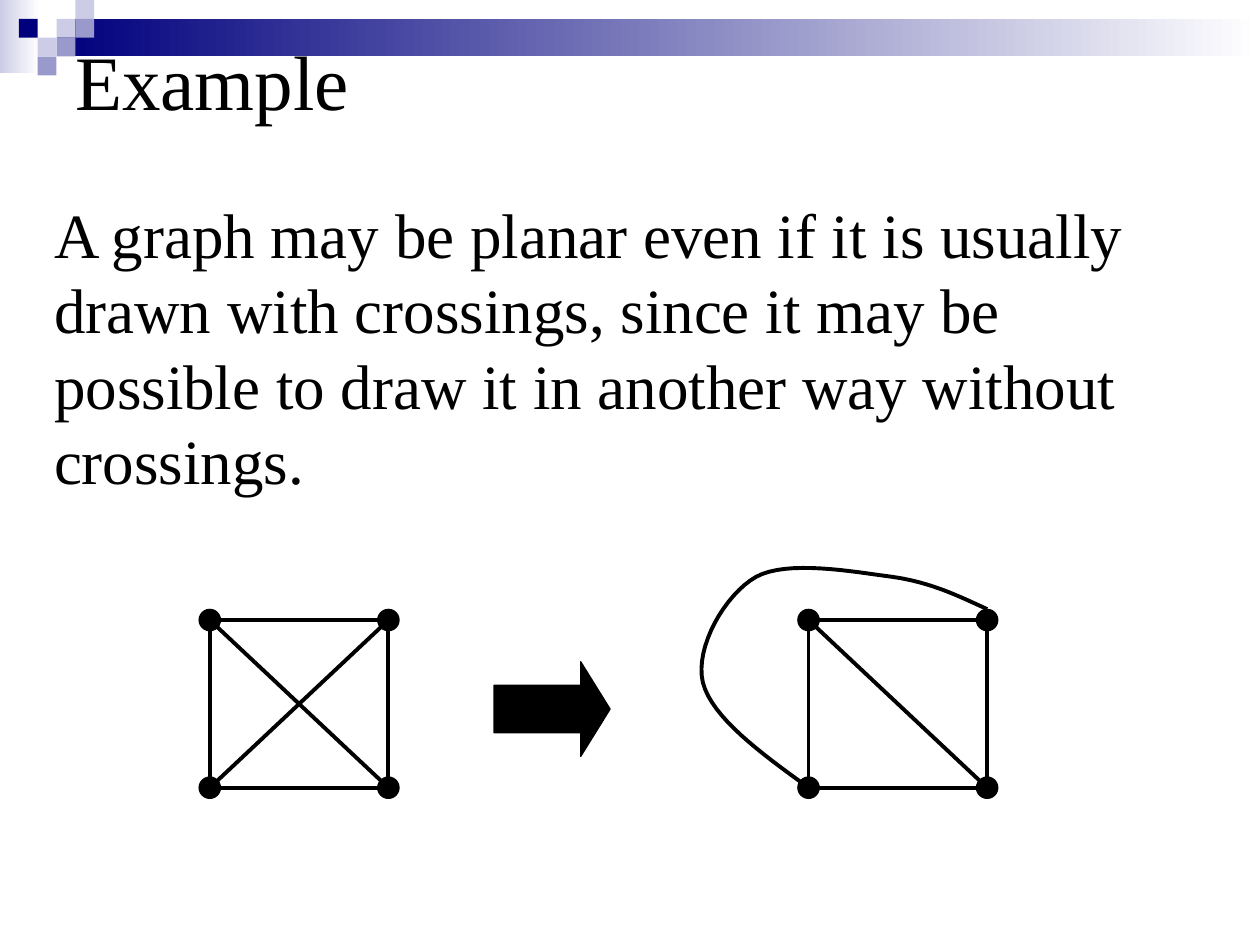
from lxml.etree import SubElement
from pptx import Presentation
from pptx.dml.color import RGBColor
from pptx.enum.shapes import MSO_CONNECTOR as CONN, MSO_SHAPE as SHAPE
from pptx.enum.text import MSO_ANCHOR as ANCHOR
from pptx.oxml.ns import qn
from pptx.util import Cm, Pt


def rgb(color):
    return RGBColor.from_string(color)


def add_shape(kind, x, y, w, h, fill=None, line=None):
    sp = s.shapes.add_shape(kind, Cm(x), Cm(y), Cm(w), Cm(h))
    sp.shadow.inherit = False
    if fill:
        sp.fill.solid()
        sp.fill.fore_color.rgb = rgb(fill)
    else:
        sp.fill.background()
    if line:
        sp.line.color.rgb = rgb("000000")
        sp.line.width = Pt(line)
    else:
        sp.line.fill.background()
    return sp


prs = Presentation()
prs.slide_width, prs.slide_height = Cm(25.4), Cm(19.05)
s = prs.slides.add_slide(prs.slide_layouts[6])

for x, y, w, h, color in [(0, 0, 0.79, 1.47, "CCCCE6"), (1.14, 0.38, 24.26, 0.76, "00007D")]:
    sp = add_shape(SHAPE.RECTANGLE, x, y, w, h)
    sp.fill.gradient()
    sp.fill.gradient_angle = 0
    for stop, stop_color, position in zip(sp.fill.gradient_stops, (color, "FFFFFF"), (0, 1)):
        stop.color.rgb = rgb(stop_color)
        stop.position = position

tile = 0.38
for col, row, color in [
    (3, 1, "CCCCE6"), (4, 0, "CCCCE6"), (4, 1, "9999CC"), (2, 2, "CCCCE6"),
    (1, 1, "00007D"), (3, 2, "9999CC"), (2, 3, "9999CC"),
]:
    add_shape(SHAPE.RECTANGLE, col * tile, row * tile, tile, tile, color)

for text, x, y, w, h, size, anchor in [
    ("Example", 1.27, 0.43, 22.86, 2.34, 44, ANCHOR.MIDDLE),
    ("A graph may be planar even if it is usually drawn with crossings, since it may be "
     "possible to draw it in another way without crossings.",
     0.84, 3.81, 23.5, 6.35, 36, ANCHOR.TOP),
]:
    tf = s.shapes.add_textbox(Cm(x), Cm(y), Cm(w), Cm(h)).text_frame
    tf.word_wrap = True
    tf.vertical_anchor = anchor
    p = tf.paragraphs[0]
    p.text = text
    p.font.name = "Times New Roman"
    p.font.size = Pt(size)
    p.font.color.rgb = rgb("000000")

top, width, height, dot = 12.5, 3.6, 3.38, 0.43
bottom = top + height
for left, crossed in [(4.23, True), (16.3, False)]:
    right = left + width
    add_shape(SHAPE.RECTANGLE, left, top, width, height, line=2.25)
    diagonals = [(top, bottom), (bottom, top)] if crossed else [(top, bottom)]
    for y1, y2 in diagonals:
        c = s.shapes.add_connector(CONN.STRAIGHT, Cm(left), Cm(y1), Cm(right), Cm(y2))
        c.line.color.rgb = rgb("000000")
        c.line.width = Pt(2.25)
        SubElement(c._element.spPr, qn("a:effectLst"))
    for x in (left, right):
        for y in (top, bottom):
            add_shape(SHAPE.OVAL, x - dot / 2, y - dot / 2, dot, dot, "000000", 0.75)

curve = [
    (19.9, 12.28), (19.33, 12.02), (18.77, 11.74), (17.99, 11.63),
    (17.22, 11.53), (15.88, 11.28), (15.24, 11.63),
    (14.61, 11.99), (14, 13.06), (14.17, 13.76),
    (14.35, 14.46), (15.32, 15.17), (16.3, 15.88),
]
steps = 16
points = []
for i in range(0, len(curve) - 1, 3):
    for n in range(1, steps + 1):
        t = n / steps
        weights = ((1 - t) ** 3, 3 * t * (1 - t) ** 2, 3 * t ** 2 * (1 - t), t ** 3)
        points.append([Cm(sum(k * pt[axis] for k, pt in zip(weights, curve[i:i + 4])))
                       for axis in (0, 1)])
fb = s.shapes.build_freeform(Cm(curve[0][0]), Cm(curve[0][1]))
fb.add_line_segments(points, close=False)
sp = fb.convert_to_shape()
sp.shadow.inherit = False
sp.fill.background()
sp.line.color.rgb = rgb("000000")
sp.line.width = Pt(2.25)

sp = add_shape(SHAPE.RIGHT_ARROW, 9.96, 13.34, 2.34, 1.91, "000000", 0.75)
sp.adjustments[0] = 0.5
sp.adjustments[1] = 0.31

prs.save("out.pptx")
